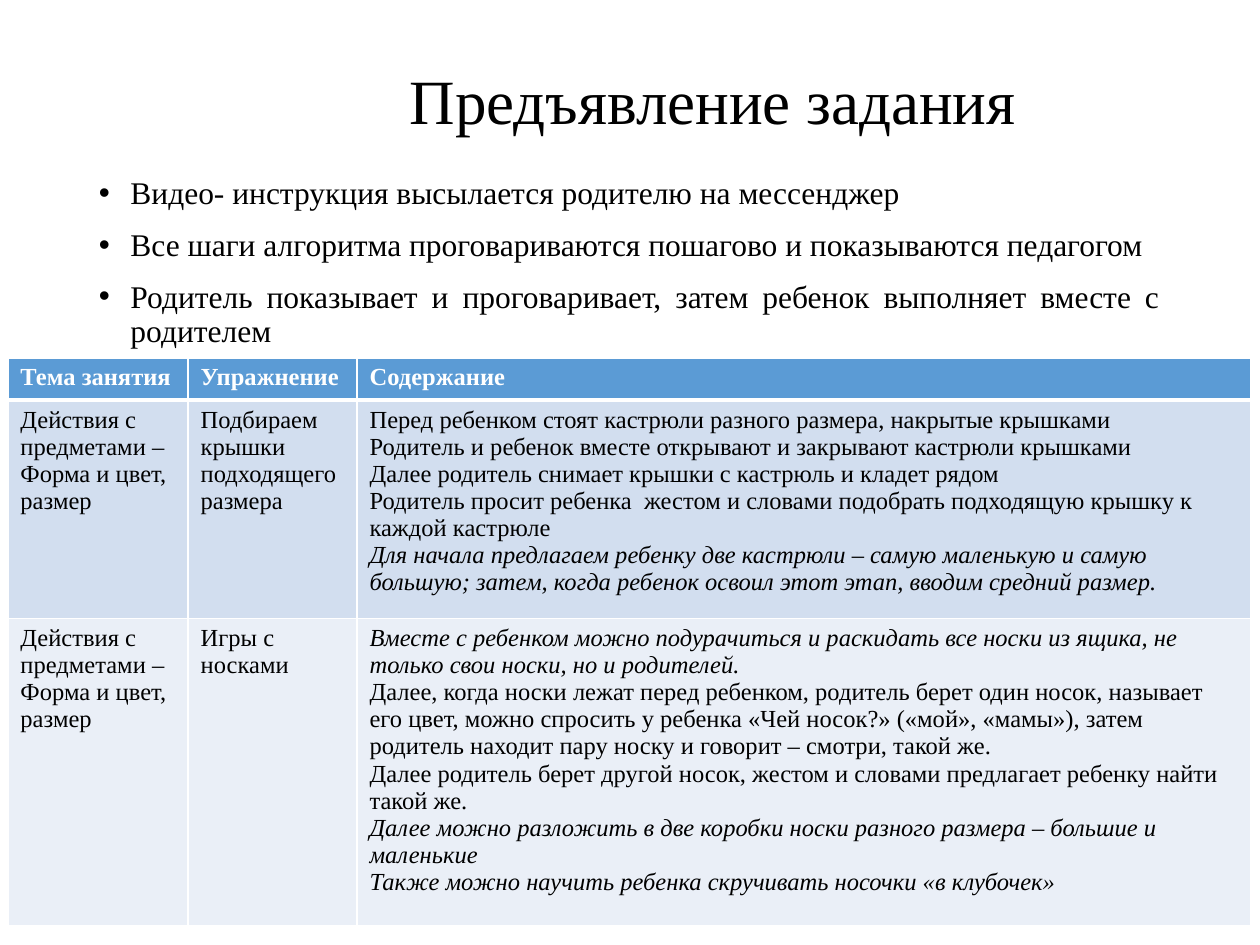
from pptx import Presentation
from pptx.dml.color import RGBColor
from pptx.enum.text import MSO_ANCHOR, PP_ALIGN
from pptx.oxml.ns import qn
from pptx.util import Pt
from lxml import etree

MIDDLE = MSO_ANCHOR.MIDDLE
LEFT, JUSTIFY = PP_ALIGN.LEFT, PP_ALIGN.JUSTIFY
FONT = "Times New Roman"
BLACK = RGBColor(0x00, 0x00, 0x00)
WHITE = RGBColor(0xFF, 0xFF, 0xFF)
HEADER_BLUE = RGBColor(0x5B, 0x9B, 0xD5)
BANDS = [RGBColor(0xD2, 0xDE, 0xEF), RGBColor(0xEA, 0xEF, 0xF7)]

TITLE = "Предъявление задания"
STEPS = [
    "Видео- инструкция высылается родителю на мессенджер",
    "Все шаги алгоритма проговариваются пошагово и показываются педагогом",
    "Родитель показывает и проговаривает, затем ребенок выполняет вместе с родителем",
]
HEADINGS = ["Тема занятия", "Упражнение", "Содержание"]
TOPIC = "Действия с предметами – Форма и цвет, размер"
LESSONS = [
    (
        "Подбираем крышки подходящего размера",
        [
            ("Перед ребенком стоят кастрюли разного размера, накрытые крышками", False),
            ("Родитель и ребенок вместе открывают и закрывают кастрюли крышками", False),
            ("Далее родитель снимает крышки с кастрюль и кладет рядом", False),
            ("Родитель просит ребенка  жестом и словами подобрать подходящую крышку "
             "к каждой кастрюле", False),
            ("Для начала предлагаем ребенку две кастрюли – самую маленькую и самую большую; "
             "затем, когда ребенок освоил этот этап, вводим средний размер.", True),
        ],
    ),
    (
        "Игры с носками",
        [
            ("Вместе с ребенком можно подурачиться и раскидать все носки из ящика, "
             "не только свои носки, но и родителей.", True),
            ("Далее, когда носки лежат перед ребенком, родитель берет один носок, называет "
             "его цвет, можно спросить у ребенка «Чей носок?» («мой», «мамы»), затем "
             "родитель находит пару носку и говорит – смотри, такой же.", False),
            ("Далее родитель берет другой носок, жестом и словами предлагает ребенку "
             "найти такой же.", False),
            ("Далее можно разложить в две коробки носки разного размера – "
             "большие и маленькие", True),
            ("Также можно научить ребенка скручивать носочки «в клубочек»", True),
        ],
    ),
]
COLUMN_WIDTHS = [103, 96.5, 511]
ROW_HEIGHTS = [22, 115, 162]


def style(paragraph, size, color=BLACK, bold=False, italic=False):
    for span in paragraph.runs:
        font = span.font
        font.name, font.size = FONT, Pt(size)
        font.bold, font.italic = bold, italic
        font.color.rgb = color


def add_text(page, left, top, width, height, lines, size, align):
    box = page.shapes.add_textbox(Pt(left), Pt(top), Pt(width), Pt(height))
    frame = box.text_frame
    frame.word_wrap = True
    frame.text = "\n".join(lines)
    for paragraph in frame.paragraphs:
        paragraph.alignment = align
        paragraph.line_spacing = 0.9
        style(paragraph, size)
    return frame


def add_bullet(paragraph):
    properties = paragraph._p.get_or_add_pPr()
    properties.set("marL", str(Pt(18)))
    properties.set("indent", str(-Pt(18)))
    etree.SubElement(properties, qn("a:buFont")).set("typeface", "Arial")
    etree.SubElement(properties, qn("a:buChar")).set("char", "•")


def add_borders(cell, bottom):
    properties = cell._tc.get_or_add_tcPr()
    widths = {"a:lnL": 1, "a:lnR": 1, "a:lnT": 1, "a:lnB": bottom}
    for position, (side, width) in enumerate(widths.items()):
        line = etree.Element(qn(side), w=str(Pt(width)))
        fill = etree.SubElement(line, qn("a:solidFill"))
        etree.SubElement(fill, qn("a:srgbClr")).set("val", str(WHITE))
        properties.insert(position, line)


def fill_cell(cell, content, fill, color=BLACK, bold=False, bottom=1):
    cell.fill.solid()
    cell.fill.fore_color.rgb = fill
    add_borders(cell, bottom)
    cell.text_frame.text = "\n".join(text for text, _ in content)
    for paragraph, (_, italic) in zip(cell.text_frame.paragraphs, content):
        style(paragraph, 14, color, bold, italic)


def add_lessons(page):
    frame = page.shapes.add_table(
        len(ROW_HEIGHTS), len(COLUMN_WIDTHS), Pt(4.5), Pt(204.5),
        Pt(sum(COLUMN_WIDTHS)), Pt(sum(ROW_HEIGHTS)))
    table = frame.table
    for column, width in zip(table.columns, COLUMN_WIDTHS):
        column.width = Pt(width)
    for row, height in zip(table.rows, ROW_HEIGHTS):
        row.height = Pt(height)
    for column, heading in enumerate(HEADINGS):
        fill_cell(table.cell(0, column), [(heading, False)], HEADER_BLUE, WHITE, True, 3)
    for row, ((exercise, content), band) in enumerate(zip(LESSONS, BANDS), 1):
        cells = [[(TOPIC, False)], [(exercise, False)], content]
        for column, lines in enumerate(cells):
            fill_cell(table.cell(row, column), lines, band)
            if row == 1:
                top_line = table.cell(row, column)._tc.tcPr.find(qn("a:lnT"))
                top_line.set("w", str(Pt(3)))


def main():
    deck = Presentation()
    deck.slide_width, deck.slide_height = Pt(720), Pt(540)
    page = deck.slides.add_slide(deck.slide_layouts[6])
    title = add_text(page, 227, 29, 443.5, 60.5, [TITLE], 36, LEFT)
    title.vertical_anchor = MIDDLE
    steps = add_text(page, 49.5, 98, 620.5, 106.5, STEPS, 18, JUSTIFY)
    for position, paragraph in enumerate(steps.paragraphs):
        if position:
            paragraph.space_before = Pt(10)
        add_bullet(paragraph)
    add_lessons(page)
    deck.save("out.pptx")


if __name__ == "__main__":
    main()
